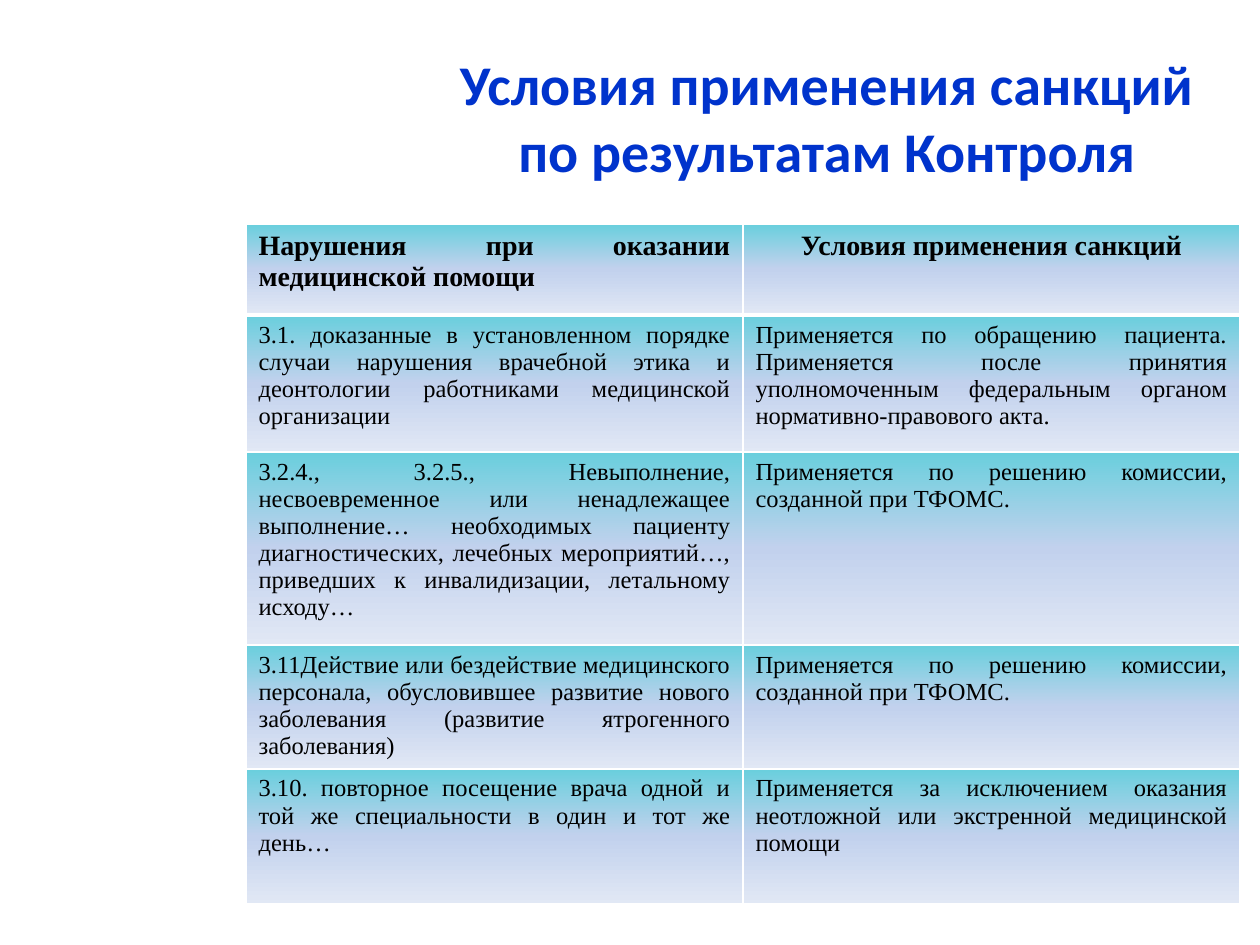
from dataclasses import dataclass

import lxml.etree
import pptx
import pptx.dml.color
import pptx.enum.text
import pptx.oxml
import pptx.oxml.ns
import pptx.util

PX = 914400 // 126
COLORS = {
    "title": "0033CC",
    "text": "000000",
    "border": "FFFFFF",
    "top": "69CFDD",
    "middle": "C2D1ED",
    "bottom": "E1E8F5",
}
GRADIENT = ((0, "top"), (50, "middle"), (100, "bottom"))
ALIGN = pptx.enum.text.PP_ALIGN
NS = pptx.oxml.ns.nsdecls("a")


@dataclass
class Row:
    height: int
    violation: str
    condition: str


HEADER = Row(91, "Нарушения при оказании медицинской помощи", "Условия применения санкций")
COMMISSION = "Применяется по решению комиссии, созданной при ТФОМС."
ROWS = [
    HEADER,
    Row(137,
        "3.1. доказанные в установленном порядке случаи нарушения врачебной этика "
        "и деонтологии работниками медицинской организации",
        "Применяется по обращению пациента. Применяется после принятия "
        "уполномоченным федеральным органом нормативно-правового акта."),
    Row(193,
        "3.2.4., 3.2.5., Невыполнение, несвоевременное или ненадлежащее выполнение… "
        "необходимых пациенту диагностических, лечебных мероприятий…, приведших к "
        "инвалидизации, летальному исходу…",
        COMMISSION),
    Row(124,
        "3.11Действие или бездействие медицинского персонала, обусловившее развитие "
        "нового заболевания (развитие ятрогенного заболевания)",
        COMMISSION),
    Row(135,
        "3.10. повторное посещение врача одной и той же специальности в один и тот же день…",
        "Применяется за исключением оказания неотложной или экстренной медицинской помощи"),
]


def px(length: int) -> int:
    return length * PX


def line_xml(tag: str, color: str, points: float) -> str:
    return (f'<a:{tag} {NS} w="{pptx.util.Pt(points)}"><a:solidFill>'
            f'<a:srgbClr val="{COLORS[color]}"/></a:solidFill></a:{tag}>')


def format_text(frame, font_name: str, size: int, bold: bool, color: str, align) -> None:
    paragraph = frame.paragraphs[0]
    paragraph.alignment = align
    font = paragraph.runs[0].font
    font.name, font.size, font.bold = font_name, pptx.util.Pt(size), bold
    font.color.rgb = pptx.dml.color.RGBColor.from_string(COLORS[color])


def style_cell(cell, top_line: int, bottom_line: int) -> None:
    """Give a cell white borders and a vertical gradient."""
    properties = cell._tc.get_or_add_tcPr()
    for tag, points in (("lnL", 1), ("lnR", 1), ("lnT", top_line), ("lnB", bottom_line)):
        properties.append(pptx.oxml.parse_xml(line_xml(tag, "border", points)))
    stops = "".join(f'<a:gs pos="{percent * 1000}"><a:srgbClr val="{COLORS[color]}"/></a:gs>'
                    for percent, color in GRADIENT)
    properties.append(pptx.oxml.parse_xml(
        f'<a:gradFill {NS} rotWithShape="1"><a:gsLst>{stops}</a:gsLst>'
        '<a:lin ang="5400000" scaled="0"/></a:gradFill>'))


def add_title(slide) -> None:
    title = slide.shapes.title
    title.left, title.top, title.width, title.height = map(px, (423, 38, 808, 157))
    frame = title.text_frame
    frame.text = "Условия применения санкций по результатам Контроля"
    frame.word_wrap = True
    frame.auto_size = pptx.enum.text.MSO_AUTO_SIZE.NONE
    frame.vertical_anchor = pptx.enum.text.MSO_ANCHOR.MIDDLE
    format_text(frame, "Calibri", 32, True, "title", ALIGN.CENTER)
    # Thin outline of the letters
    run_properties = frame.paragraphs[0].runs[0].font._element
    run_properties.insert(0, pptx.oxml.parse_xml(line_xml("ln", "text", 0.9)))


def add_sanctions_table(slide, left: int, top: int, column_width: int) -> None:
    height = sum(row.height for row in ROWS)
    sanctions = slide.shapes.add_table(
        len(ROWS), 2, px(left), px(top), px(2 * column_width), px(height)).table
    for column in sanctions.columns:
        column.width = px(column_width)
    for index, row in enumerate(ROWS):
        sanctions.rows[index].height = px(row.height)
        is_header = row is HEADER
        for column, text in enumerate((row.violation, row.condition)):
            cell = sanctions.cell(index, column)
            cell.text_frame.text = text
            centred = is_header and column == 1
            format_text(cell.text_frame, "Times New Roman", 16 if is_header else 14,
                        is_header, "text", ALIGN.CENTER if centred else ALIGN.JUSTIFY)
            style_cell(cell, 3 if index == 1 else 1, 3 if is_header else 1)


def main() -> None:
    deck = pptx.Presentation()
    deck.slide_width, deck.slide_height = pptx.util.Inches(10), pptx.util.Inches(7.5)
    slide = deck.slides.add_slide(deck.slide_layouts[5])
    add_title(slide)
    add_sanctions_table(slide, left=246, top=224, column_width=497)
    deck.save("out.pptx")


if __name__ == "__main__":
    main()
